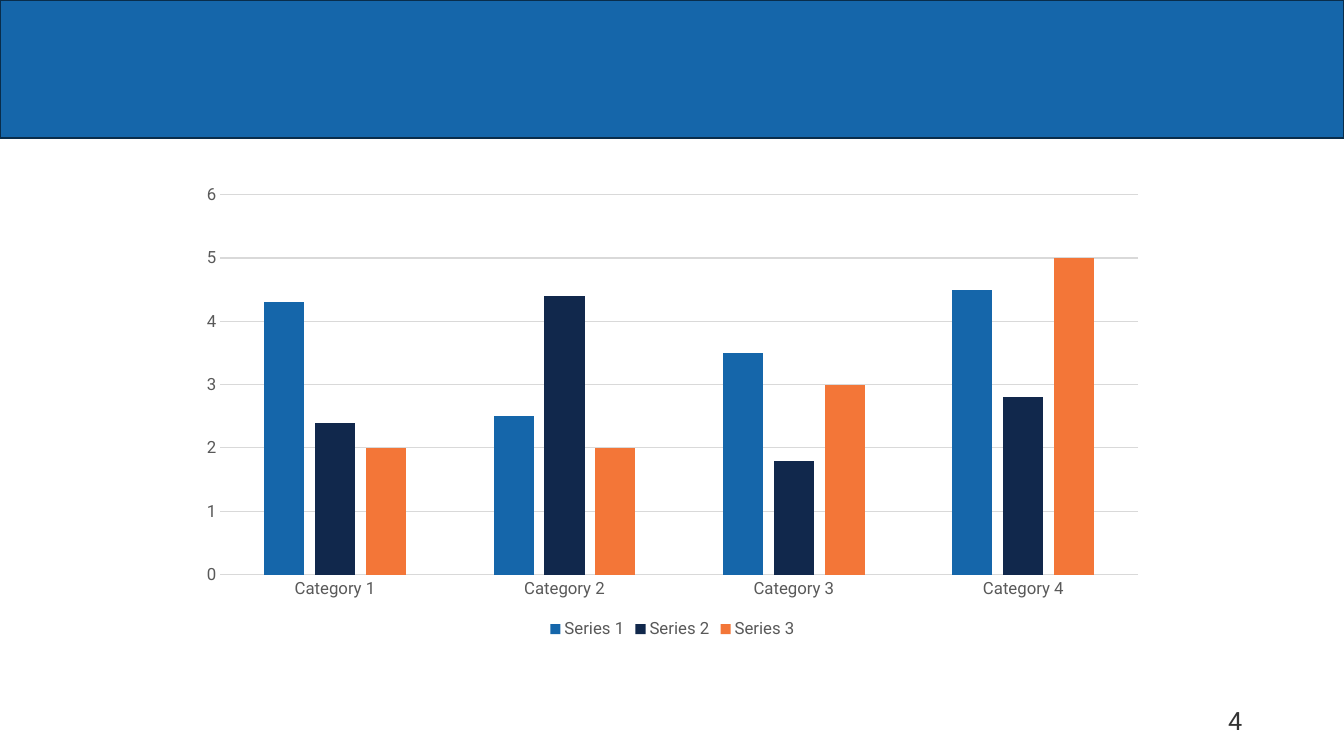
from pptx import Presentation
from pptx.chart.data import CategoryChartData
from pptx.dml.color import RGBColor
from pptx.enum.chart import XL_CHART_TYPE, XL_LEGEND_POSITION, XL_TICK_MARK
from pptx.enum.shapes import MSO_SHAPE
from pptx.enum.text import MSO_ANCHOR, PP_ALIGN
from pptx.util import Inches, Pt

BLUE = RGBColor(0x15, 0x66, 0xAA)
NAVY = RGBColor(0x11, 0x28, 0x4C)
ORANGE = RGBColor(0xF3, 0x76, 0x38)
BANNER_EDGE = RGBColor(0x09, 0x2D, 0x4B)
NUMBER_GRAY = RGBColor(0x33, 0x33, 0x33)
LABEL_GRAY = RGBColor(0x59, 0x59, 0x59)
GRID_GRAY = RGBColor(0xD9, 0xD9, 0xD9)

FONT = "Roboto"
CATEGORIES = ["Category 1", "Category 2", "Category 3", "Category 4"]
SERIES = [
    ("Series 1", (4.3, 2.5, 3.5, 4.5), BLUE),
    ("Series 2", (2.4, 4.4, 1.8, 2.8), NAVY),
    ("Series 3", (2, 2, 3, 5), ORANGE),
]


def set_font(font, size, color):
    for name, value in {"name": FONT, "size": Pt(size)}.items():
        setattr(font, name, value)
    font.color.rgb = color


def set_line(line, color, width):
    line.color.rgb = color
    line.width = Pt(width)


def add_banner(slide, width, height):
    banner = slide.shapes.add_shape(MSO_SHAPE.RECTANGLE, 0, 0, width, height)
    banner.shadow.inherit = False
    banner.fill.solid()
    banner.fill.fore_color.rgb = BLUE
    set_line(banner.line, BANNER_EDGE, 1.5)


def add_page_number(slide, number, left, top, width, height):
    frame = slide.shapes.add_textbox(left, top, width, height).text_frame
    frame.word_wrap = True
    frame.vertical_anchor = MSO_ANCHOR.MIDDLE
    paragraph = frame.paragraphs[0]
    paragraph.alignment = PP_ALIGN.RIGHT
    run = paragraph.add_run()
    run.text = number
    set_font(run.font, 18, NUMBER_GRAY)


def format_axes(chart):
    scale, categories = chart.value_axis, chart.category_axis
    for axis in (scale, categories):
        axis.major_tick_mark = axis.minor_tick_mark = XL_TICK_MARK.NONE
        set_font(axis.tick_labels.font, 12, LABEL_GRAY)
    for name, value in {"minimum_scale": 0, "maximum_scale": 6, "major_unit": 1}.items():
        setattr(scale, name, value)
    scale.format.line.fill.background()
    set_line(scale.major_gridlines.format.line, GRID_GRAY, 0.75)
    set_line(categories.format.line, GRID_GRAY, 0.75)


def add_column_chart(slide, left, top, width, height):
    data = CategoryChartData()
    data.categories = CATEGORIES
    for name, values, _ in SERIES:
        data.add_series(name, values)
    chart = slide.shapes.add_chart(
        XL_CHART_TYPE.COLUMN_CLUSTERED, left, top, width, height, data
    ).chart
    chart.has_title = False
    set_font(chart.font, 10, RGBColor(0, 0, 0))
    format_axes(chart)

    # Columns
    columns = chart.plots[0]
    for name, value in {"gap_width": 219, "overlap": -27, "vary_by_categories": False}.items():
        setattr(columns, name, value)
    for series, (_, _, color) in zip(columns.series, SERIES):
        series.format.fill.solid()
        series.format.fill.fore_color.rgb = color

    # Legend
    chart.has_legend = True
    chart.legend.position = XL_LEGEND_POSITION.BOTTOM
    chart.legend.include_in_layout = False
    set_font(chart.legend.font, 12, LABEL_GRAY)


def main():
    deck = Presentation()
    deck.slide_width, deck.slide_height = Inches(13.33), Inches(7.5)
    slide = deck.slides.add_slide(deck.slide_layouts[6])

    add_banner(slide, deck.slide_width, Inches(1.37))
    add_page_number(slide, "4", Inches(9.42), Inches(6.95), Inches(3), Inches(0.4))
    add_column_chart(slide, Inches(1.86), Inches(1.74), Inches(9.62), Inches(4.64))

    deck.save("out.pptx")


if __name__ == "__main__":
    main()
